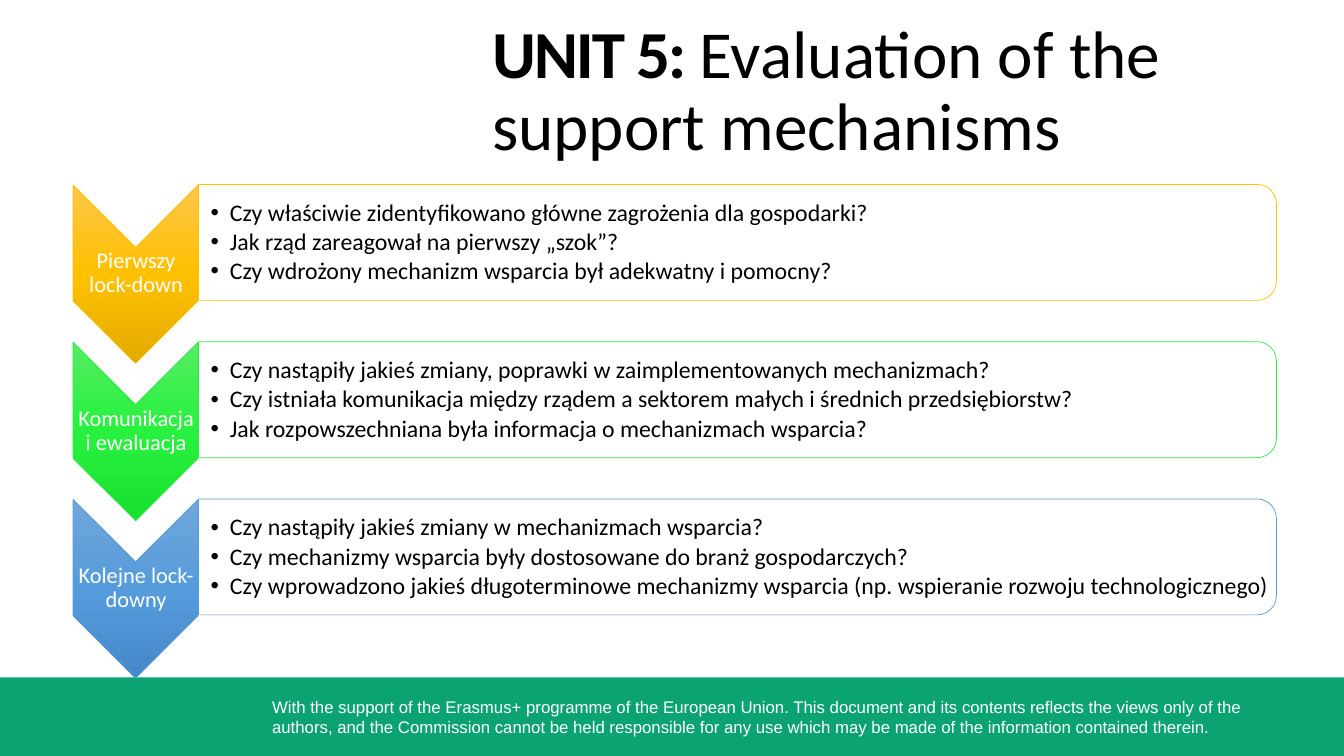
from lxml import etree
from pptx import Presentation
from pptx.dml.color import RGBColor
from pptx.enum.shapes import MSO_SHAPE
from pptx.enum.text import MSO_ANCHOR, PP_ALIGN
from pptx.oxml import parse_xml
from pptx.oxml.ns import nsdecls, qn
from pptx.util import Inches, Pt

COLORS = {"band": "0CA373", "white": "FFFFFF", "black": "000000"}

# label, outline colour, gradient from top to bottom, questions
STAGES = [
    ("Pierwszy lock-down", "FFC000", ("FFC64B", "FFC000", "E3AB00"), [
        "Czy właściwie zidentyfikowano główne zagrożenia dla gospodarki?",
        "Jak rząd zareagował na pierwszy „szok”?",
        "Czy wdrożony mechanizm wsparcia był adekwatny i pomocny?"]),
    ("Komunikacja i ewaluacja", "30E845", ("56EC62", "27F13E", "18E02F"), [
        "Czy nastąpiły jakieś zmiany, poprawki w zaimplementowanych mechanizmach?",
        "Czy istniała komunikacja między rządem a sektorem małych i średnich przedsiębiorstw?",
        "Jak rozpowszechniana była informacja o mechanizmach wsparcia?"]),
    ("Kolejne lock-downy", "5B9BD5", ("71A6DB", "559BDB", "448ACA"), [
        "Czy nastąpiły jakieś zmiany w mechanizmach wsparcia?",
        "Czy mechanizmy wsparcia były dostosowane do branż gospodarczych?",
        "Czy wprowadzono jakieś długoterminowe mechanizmy wsparcia "
        "(np. wspieranie rozwoju technologicznego)"]),
]


def write(sp, lines, size, color, font="Calibri", align=PP_ALIGN.LEFT, anchor=MSO_ANCHOR.TOP,
          insets=(0.01, 0.01, 0.01, 0.01), spacing=0.9, after=0, bullet=False):
    """Fill a shape with paragraphs; each line is a list of (text, bold, tracking) runs."""
    tf = sp.text_frame
    tf.word_wrap = True
    tf.vertical_anchor = anchor
    tf.margin_left, tf.margin_top, tf.margin_right, tf.margin_bottom = map(Inches, insets)
    for i, runs in enumerate(lines):
        p = tf.paragraphs[0] if i == 0 else tf.add_paragraph()
        if bullet:
            pPr = p._p.get_or_add_pPr()
            pPr.set("marL", str(Inches(0.19)))
            pPr.set("indent", str(-Inches(0.19)))
            etree.SubElement(pPr, qn("a:buFont")).set("typeface", "Arial")
            etree.SubElement(pPr, qn("a:buChar")).set("char", "•")
        p.alignment = align
        p.line_spacing = spacing
        p.space_before = Pt(0)
        p.space_after = Pt(after)
        for text, bold, tracking in runs:
            r = p.add_run()
            r.text = text
            r.font.name = font
            r.font.size = Pt(size)
            r.font.bold = bold
            r.font.color.rgb = RGBColor.from_string(color)
            if tracking:
                r._r.get_or_add_rPr().set("spc", str(int(tracking * 100)))


def add_shape(kind, x, y, w, h, fill, line=None, rotation=0):
    sp = s.shapes.add_shape(kind, Inches(x), Inches(y), Inches(w), Inches(h))
    sp.shadow.inherit = False
    sp.rotation = rotation
    sp.fill.solid()
    sp.fill.fore_color.rgb = RGBColor.from_string(fill)
    if line:
        sp.line.color.rgb = RGBColor.from_string(line)
        sp.line.width = Pt(0.5)
    else:
        sp.line.fill.background()
    return sp


prs = Presentation()
prs.slide_width, prs.slide_height = Inches(13.33), Inches(7.5)
s = prs.slides.add_slide(prs.slide_layouts[5])

# Footer band
add_shape(MSO_SHAPE.RECTANGLE, 0, 6.72, 13.33, 0.78, COLORS["band"])
footer = s.shapes.add_textbox(Inches(2.6), Inches(6.86), Inches(10.42), Inches(0.5))
write(footer, [[("With the support of the Erasmus+ programme of the European Union. This document and "
                 "its contents reflects the views only of the authors, and the Commission cannot be "
                 "held responsible for any use which may be made of the information contained "
                 "therein.", False, 0)]],
      12, COLORS["white"], font="Arial", insets=(0.1, 0.05, 0.1, 0.05), spacing=1.0)

# Title
title = s.shapes.title
title.left, title.top, title.width, title.height = map(Inches, (4.88, 0.19, 7.83, 1.48))
write(title, [[("UNIT 5: ", True, -1.5), ("Evaluation of the support mechanisms", False, 0)]],
      48, COLORS["black"], insets=(0, 0.01, 0, 0))

# Stages: a downward chevron and a box of questions, both turned a quarter
for i, (label, outline, gradient, questions) in enumerate(STAGES):
    top = 1.83 + 1.56 * i

    chevron = add_shape(MSO_SHAPE.CHEVRON, 0.46, top + 0.27, 1.77, 1.24, outline, outline, 90)
    stops = "".join(f'<a:gs pos="{n * 50000}"><a:srgbClr val="{c}"/></a:gs>'
                    for n, c in enumerate(gradient))
    solid = chevron._element.spPr.find(qn("a:solidFill"))
    solid.getparent().replace(solid, parse_xml(
        f'<a:gradFill {nsdecls("a")} rotWithShape="0"><a:gsLst>{stops}</a:gsLst>'
        '<a:lin ang="5400000" scaled="0"/></a:gradFill>'))

    name = s.shapes.add_textbox(Inches(0.73), Inches(top + 0.62), Inches(1.24), Inches(0.53))
    write(name, [[(label, False, 0)]], 16, COLORS["white"],
          align=PP_ALIGN.CENTER, anchor=MSO_ANCHOR.MIDDLE)

    box = add_shape(MSO_SHAPE.ROUND_2_SAME_RECTANGLE, 6.74, top - 4.77, 1.15, 10.69,
                    COLORS["white"], outline, 90)
    color = box._element.spPr.find(qn("a:solidFill")).find(qn("a:srgbClr"))
    etree.SubElement(color, qn("a:alpha")).set("val", "90000")

    body = s.shapes.add_textbox(Inches(1.96), Inches(top + 0.06), Inches(10.64), Inches(1.04))
    write(body, [[(q, False, 0)] for q in questions], 17, COLORS["black"],
          anchor=MSO_ANCHOR.MIDDLE, insets=(0.13, 0.01, 0.01, 0.01), after=2.5, bullet=True)

prs.save("out.pptx")
